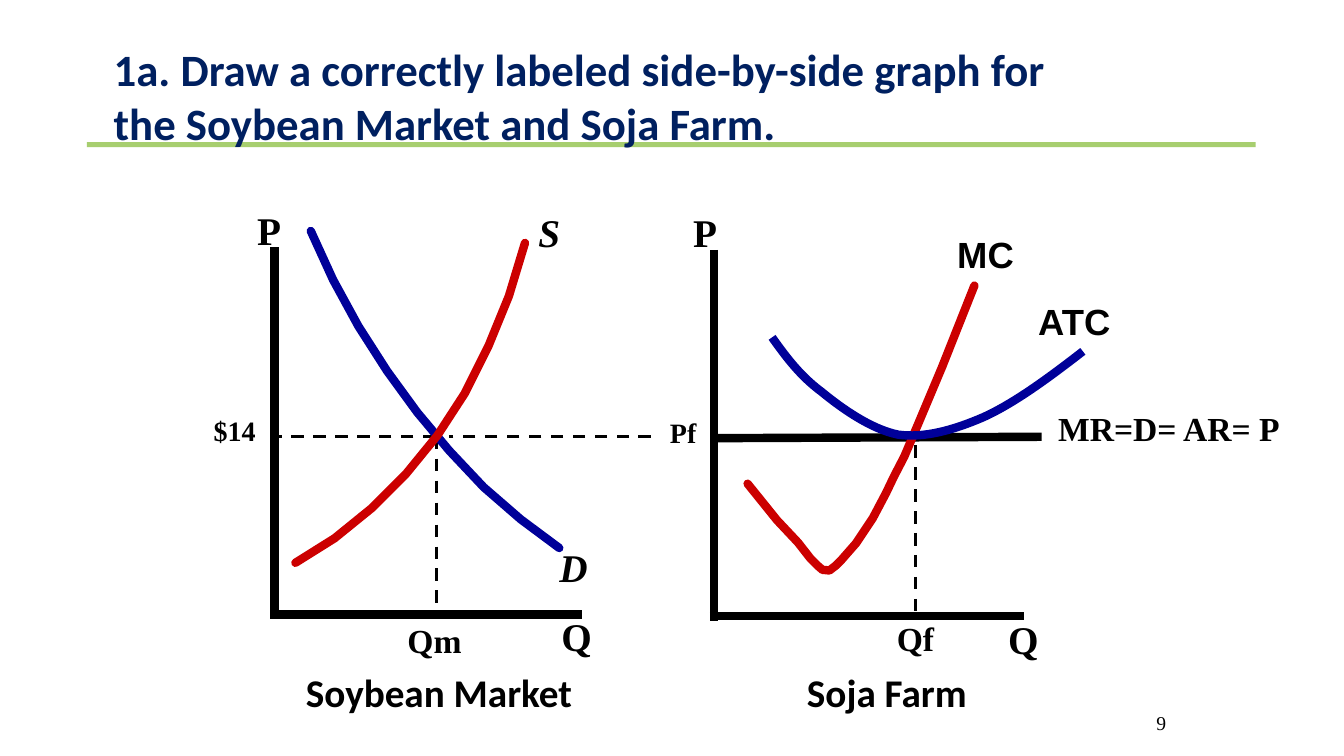
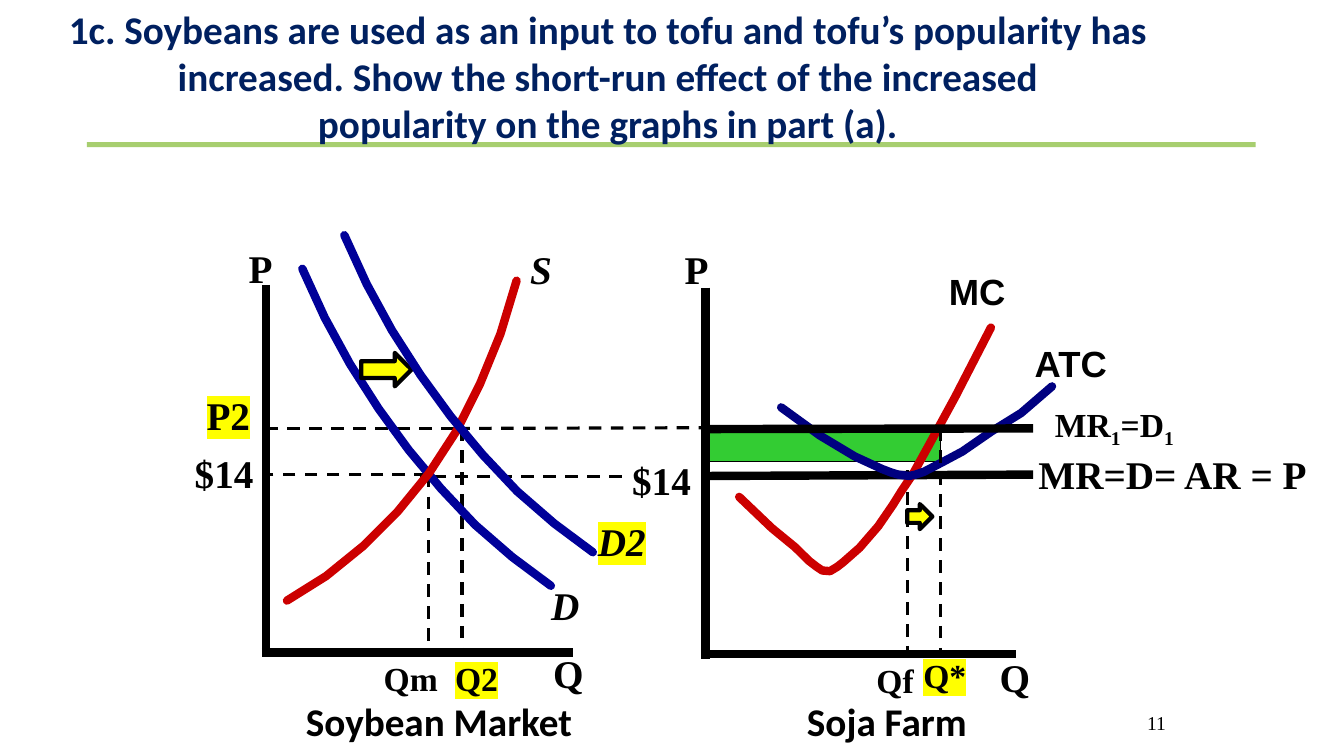
"""Builds two slides of side-by-side market and farm graphs."""
from lxml import etree
from pptx import Presentation
from pptx import util as u
from pptx.dml.color import RGBColor
from pptx.enum import dml, shapes, text
from pptx.oxml.ns import qn

COLORS = {
    "ink": "000000", "title": "002060", "rule": "A7CE6F", "demand": "000099",
    "cost": "000080", "supply": "CC0000", "profit": "33CC33", "mark": "FFFF00",
}
RGB = {part: RGBColor.from_string(code) for part, code in COLORS.items()}
SERIF, SANS, HEADING = "Times New Roman", "Arial", "Calibri"
LEFT, CENTER, RIGHT = text.PP_ALIGN.LEFT, text.PP_ALIGN.CENTER, text.PP_ALIGN.RIGHT


def add_label(slide, words, x, y, width=80, size=24, align=LEFT, marked=False, **look):
    box = slide.shapes.add_textbox(u.Pt(x), u.Pt(y), u.Pt(width), u.Pt(size * 1.2 + 7))
    box.text_frame.word_wrap = True
    line = box.text_frame.paragraphs[0]
    line.alignment = align
    formats = {"name": SERIF, "bold": True, "size": u.Pt(size), **look}
    for index, piece in enumerate(words.split("_")):
        run = line.add_run()
        run.text = piece
        for key, value in formats.items():
            setattr(run.font, key, value)
        run.font.color.rgb = RGB["ink"]
        props = run.font._element
        if index % 2:
            props.set("baseline", "-25000")
        if marked:
            highlight = etree.Element(qn("a:highlight"))
            etree.SubElement(highlight, qn("a:srgbClr"), val=COLORS["mark"])
            props.find(qn("a:solidFill")).addnext(highlight)


def add_path(slide, points, color="ink", width=6, dashed=False, cap="rnd"):
    ends = [(u.Pt(x), u.Pt(y)) for x, y in points]
    if len(ends) == 2:
        stroke = slide.shapes.add_connector(shapes.MSO_CONNECTOR.STRAIGHT, *ends[0], *ends[1])
    else:
        builder = slide.shapes.build_freeform(*ends[0], scale=1.0)
        builder.add_line_segments(ends[1:], close=False)
        stroke = builder.convert_to_shape()
        stroke.fill.background()
        stroke.line.fill.solid()
        stroke.line._get_or_add_ln().set("cap", cap)
    stroke.line.color.rgb = RGB[color]
    stroke.line.width = u.Pt(width)
    if dashed:
        stroke.line.dash_style = dml.MSO_LINE.DASH
    etree.SubElement(stroke.element.spPr, qn("a:effectLst"))
    return stroke


DEMAND = [(222, 165), (238, 200), (256, 233), (276.5, 265), (298, 294.5),
          (321, 322), (345.5, 348), (372, 371), (399.5, 391.5)]
SUPPLY = [(211, 402), (239, 384.5), (265.5, 363), (290, 338.5), (312.5, 311),
          (332, 281), (349, 247), (363.5, 211.5), (375, 173.5)]
MARGINAL_COST = [(534, 345.5), (555, 371.5), (570, 387.5), (579, 399), (584, 404),
                 (587.5, 407), (592.5, 407.5), (597, 404), (601, 400), (611.5, 388),
                 (623.5, 370), (633, 352), (638.5, 340.5), (646, 326), (656, 302.5),
                 (673, 262), (696, 204)]
WIDER_COST = [(528 + (x - 534) * 1.11, 234 + (y - 204) * 0.855) for x, y in MARGINAL_COST]
SMOOTH_AVERAGE = [(551.5, 241), (561.5, 255), (571.5, 268.5), (587, 280), (601, 291.5),
                  (622, 306.5), (641.5, 310.5), (660, 313), (680.5, 307.5),
                  (702.5, 298), (724.5, 288), (749, 270), (773.5, 251)]
AVERAGE = [(558, 291), (585.5, 311), (610.5, 326), (630, 335), (636.5, 337.5),
           (641.5, 339), (649.5, 340), (654, 339), (660, 337), (672.5, 330.5),
           (687.5, 322.5), (708.5, 308), (729.5, 295), (751.5, 276)]
AXES = [[(510, 178.5), (510, 443.5)], [(507, 440), (731.5, 440)],
        [(196, 176.5), (196, 441.5)], [(193, 439), (415.5, 439)]]
AXIS_NAMES = [("P", 488, 145), ("Q", 713, 436), ("P", 176.5, 144), ("Q", 394, 433.5)]
CURVE_NAMES = [("D", 392.5, 384.5), ("S", 377.5, 145)]

SCENES = [
    {"title": "1a. Draw a correctly labeled side-by-side graph for "
              "the Soybean Market and Soja Farm.",
     "place": (74, 26, 702, 94), "size": 32, "align": LEFT,
     "number": "9", "offset": (0, 0), "caption_top": 473.5,
     "guides": [[(465, 312), (321, 312)], [(311, 312), (195, 312)],
                [(312, 312), (312, 435)], [(654, 318), (654, 441)]],
     "revenue": [(510.5, 313), (744, 312)],
     "marginal": MARGINAL_COST, "average": SMOOTH_AVERAGE,
     "average_style": {"color": "demand", "cap": "flat"},
     "labels": [("$14", 145.5, 291.5, 20), ("Pf", 471.5, 293, 20),
                ("Qm", 284, 439, 24), ("Qf", 633.5, 438, 24)],
     "revenue_name": ("MR=D= AR= P", 738, 288, 194, 24), "average_name": (734.5, 210)},
    {"title": "1c. Soybeans are used as an input to tofu and tofu’s popularity has "
              "increased. Show the short-run effect of the increased\n"
              "popularity on the graphs in part (a).",
     "place": (27.5, 0, 813, 142), "size": 28, "align": CENTER,
     "number": "11", "offset": (-6, 27), "caption_top": 494.5,
     "guides": [[(648, 336), (648, 474)], [(324, 306), (192, 306)],
                [(444, 340.5), (300, 340.5)], [(305, 339), (189.5, 339)],
                [(306, 339), (306, 462)], [(330, 306), (330, 468)],
                [(508, 305.5), (330, 306)]],
     "revenue": [(504, 340), (738, 339)],
     "marginal": WIDER_COST, "average": AVERAGE,
     "average_style": {"color": "cost"},
     "labels": [("$14", 132, 317.5, 28), ("$14", 444.5, 322.5, 28),
                ("Qm", 267, 466.5, 24), ("Qf", 619, 468, 24)],
     "revenue_name": ("MR=D= AR = P", 728, 318, 219, 28), "average_name": (732, 240)},
]

deck = Presentation()
deck.slide_width, deck.slide_height = u.Pt(960), u.Pt(540)
layout = deck.slide_layouts[5]
slides = []
for scene in SCENES:
    slide = deck.slides.add_slide(layout)
    slides.append(slide)
    title = slide.shapes.title
    for side, length in zip(("left", "top", "width", "height"), scene["place"]):
        setattr(title, side, u.Pt(length))
    frame = title.text_frame
    frame.text = scene["title"]
    frame_formats = {"word_wrap": True, "auto_size": text.MSO_AUTO_SIZE.NONE,
                     "vertical_anchor": text.MSO_ANCHOR.TOP}
    for key, value in frame_formats.items():
        setattr(frame, key, value)
    for line in frame.paragraphs:
        line.alignment = scene["align"]
        for key, value in {"name": HEADING, "size": u.Pt(scene["size"]), "bold": True}.items():
            setattr(line.font, key, value)
        line.font.color.rgb = RGB["title"]
farm_slide, shift_slide = slides

rule = farm_slide.shapes.add_shape(shapes.MSO_SHAPE.RECTANGLE,
                                   u.Pt(62), u.Pt(101.5), u.Pt(835), u.Pt(3.6))
rule.shadow.inherit = False
rule.fill.solid()
rule.fill.fore_color.rgb = RGB["rule"]
rule.line.fill.background()
rule.element.nvSpPr.cNvPr.set("id", "20")
layout.shapes.element.append(rule.element)

MARKS = [(shapes.MSO_SHAPE.RECTANGLE, (504, 306, 168, 24), "profit", 0.75),
         (shapes.MSO_SHAPE.RIGHT_ARROW, (258, 252, 36, 24), "mark", 3),
         (shapes.MSO_SHAPE.RIGHT_ARROW, (648, 360, 18, 18), "mark", 3)]
arrows = []
for preset, place, color, weight in MARKS:
    mark = shift_slide.shapes.add_shape(preset, *(u.Pt(length) for length in place))
    mark.shadow.inherit = False
    mark.fill.solid()
    mark.fill.fore_color.rgb = RGB[color]
    mark.line.color.rgb = RGB["ink"]
    mark.line.width = u.Pt(weight)
    if color == "mark":
        arrows.append(mark)

for slide, scene in zip(slides, SCENES):
    dx, dy = scene["offset"]
    for guide in scene["guides"]:
        add_path(slide, guide, width=2.25, dashed=True)
    add_path(slide, scene["revenue"])
    for curve, color in ((DEMAND, "demand"), (SUPPLY, "supply")):
        add_path(slide, [(x + dx, y + dy) for x, y in curve], color)
    for axis in AXES:
        add_path(slide, [(x + dx, y + dy) for x, y in axis])
    add_path(slide, scene["marginal"], "supply")
    average = add_path(slide, scene["average"], **scene["average_style"])
    if scene["average"] is SMOOTH_AVERAGE:
        steps = average.element.findall(".//" + qn("a:lnTo"))
        for start in range(0, len(steps), 3):
            bend = etree.Element(qn("a:cubicBezTo"))
            steps[start].addprevious(bend)
            for step in steps[start:start + 3]:
                bend.append(step[0])
                step.getparent().remove(step)

    for name, x, y in AXIS_NAMES:
        add_label(slide, name, x + dx, y + dy, 40, 28)
    for name, x, y in CURVE_NAMES:
        add_label(slide, name, x + dx, y + dy, 40, 28, italic=True)
    for words, x, y, size in scene["labels"]:
        add_label(slide, words, x, y, size=size)
    add_label(slide, *scene["revenue_name"], align=CENTER)
    add_label(slide, "MC", 660 + dx, 162 + dy, 88, 26, CENTER, name=SANS)
    add_label(slide, "ATC", *scene["average_name"], 88, 26, name=SANS)
    for words, x, width, align in (("Soybean Market", 211.5, 222, LEFT),
                                   ("Soja Farm", 550.5, 166, CENTER)):
        add_label(slide, words, x, scene["caption_top"], width, 28, align, name=HEADING)
    add_label(slide, scene["number"], 690, 504, 150, 14, RIGHT, bold=False)

add_path(shift_slide, [(672, 306), (672, 468)], width=2.25, dashed=True)
add_path(shift_slide, [(504, 306.5), (738, 306)])
for arrow in arrows:
    shift_slide.shapes.element.append(arrow.element)
add_path(shift_slide, [(x + 24, y + 3) for x, y in DEMAND], "demand")
for words, x, y, size, slant in (("P2", 140.5, 276, 28, False), ("D2", 420, 366, 28, True),
                                 ("Q2", 318, 466.5, 24, False), ("Q*", 652.5, 464.5, 24, False)):
    add_label(shift_slide, words, x, y, size=size, marked=True, italic=slant)
add_label(shift_slide, "MR_1_=D_1", 736, 285, 120, align=CENTER)

deck.save("out.pptx")
